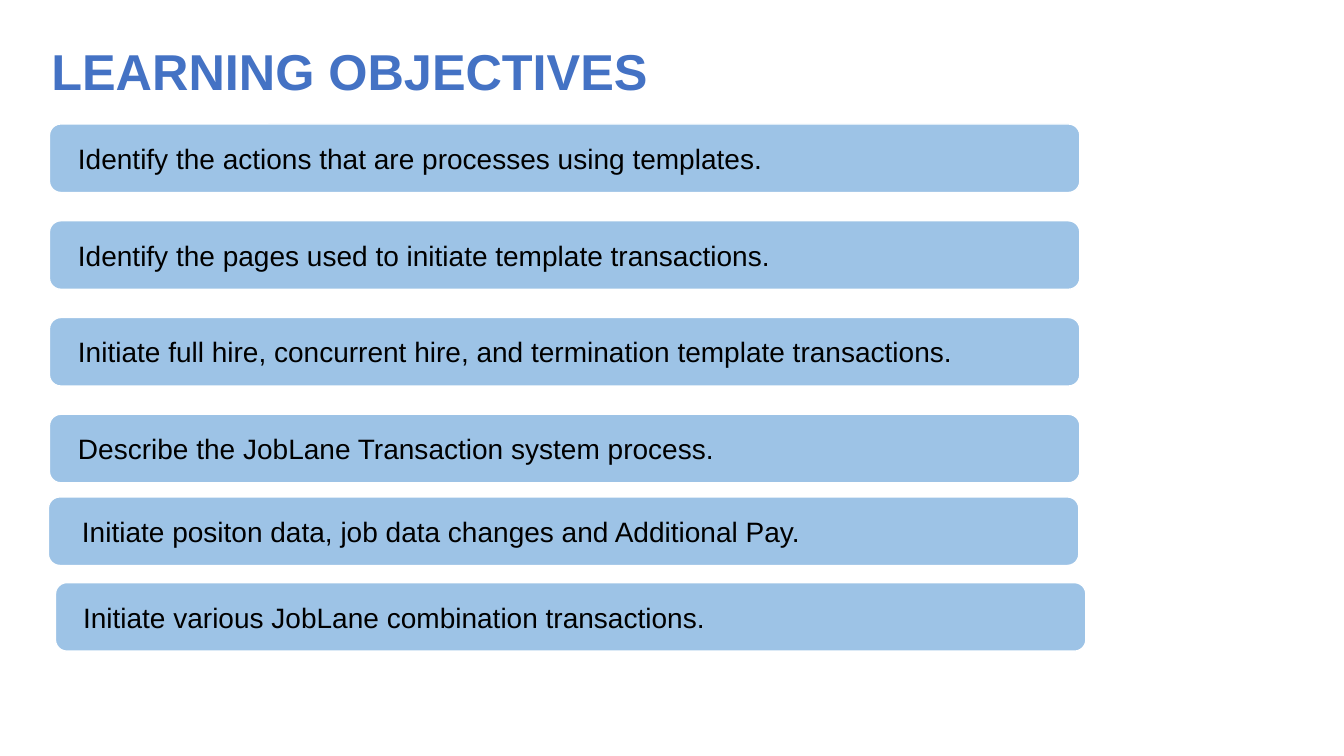
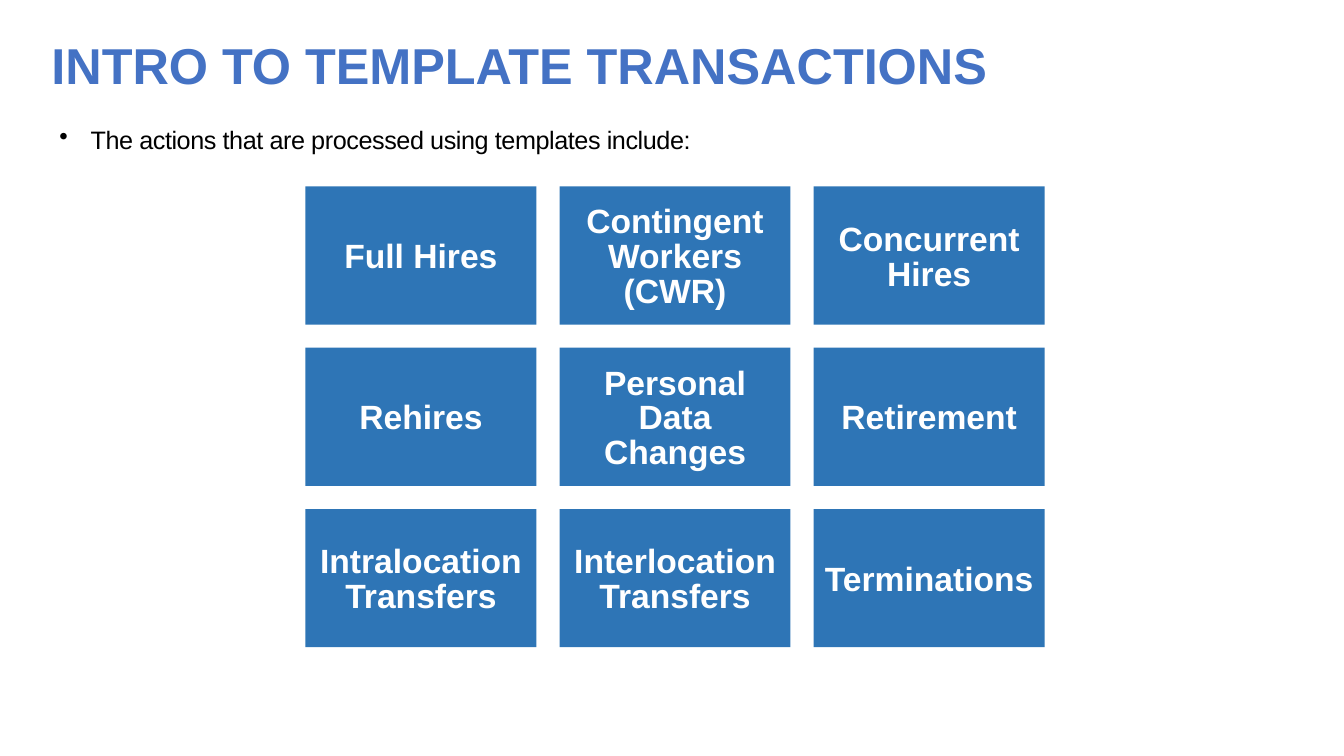
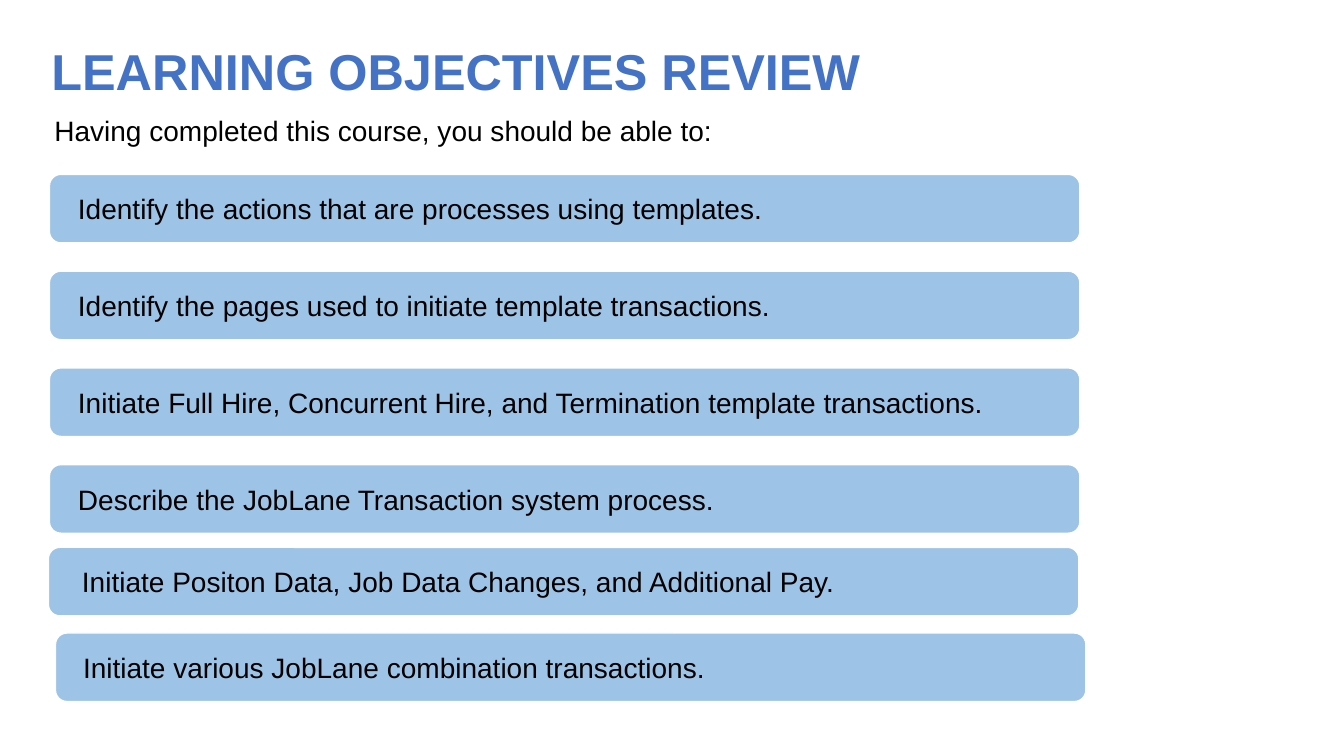
"""Build three slides on template transactions: objectives, actions and review."""
import pptx
import pptx.dml.color
import pptx.enum.shapes
import pptx.enum.text
import pptx.util
import lxml.etree

PX = 9144
TITLE_BLUE, BAR_BLUE, TILE_BLUE = "4472C4", "9DC3E6", "2E75B6"
BLACK, WHITE = "000000", "FFFFFF"
SHAPES = pptx.enum.shapes.MSO_SHAPE
ALIGN = pptx.enum.text.PP_ALIGN
MIDDLE = pptx.enum.text.MSO_ANCHOR.MIDDLE


def rgb(color):
    """Return the colour for a hex string."""
    return pptx.dml.color.RGBColor.from_string(color)


def write(box, text, size, color, bold=False, align=ALIGN.LEFT):
    """Fill a box with one formatted paragraph and return the paragraph."""
    box.text_frame.word_wrap = True
    box.text_frame.auto_size = pptx.enum.text.MSO_AUTO_SIZE.NONE
    para = box.text_frame.paragraphs[0]
    para.text = text
    para.alignment = align
    para.font.name = "Arial"
    para.font.size = pptx.util.Pt(size)
    para.font.bold = bold
    para.font.color.rgb = rgb(color)
    return para


deck = pptx.Presentation()
deck.slide_width, deck.slide_height = 1333 * PX, 750 * PX

pages = []
for heading, top, width in [
    ("LEARNING OBJECTIVES", 32, 989),
    ("INTRO TO TEMPLATE TRANSACTIONS", 26, 1199),
    ("LEARNING OBJECTIVES REVIEW", 32, 989),
]:
    page = deck.slides.add_slide(deck.slide_layouts[5])
    title = page.shapes.title
    title.left, title.top, title.width, title.height = 41 * PX, top * PX, width * PX, 75 * PX
    title.text_frame.vertical_anchor = MIDDLE
    write(title, heading, 36, TITLE_BLUE, bold=True)
    pages.append(page)
objectives_page, actions_page, review_page = pages

objectives = [
    "Identify the actions that are processes using templates.",
    "Identify the pages used to initiate template transactions.",
    "Initiate full hire, concurrent hire, and termination template transactions.",
    "Describe the JobLane Transaction system process.",
    "Initiate positon data, job data changes and Additional Pay.",
    "Initiate various JobLane combination transactions.",
]
review = objectives.copy()
review[2] = "Initiate Full Hire, Concurrent Hire, and Termination template transactions."
review[4] = "Initiate Positon Data, Job Data Changes, and Additional Pay."

bar_places = [(49, 123, 25), (49, 219, 25), (49, 315, 25), (49, 411, 25), (48, 493, 30), (55, 578, 24)]
for page, sentences, shift in [(objectives_page, objectives, 0), (review_page, review, 50)]:
    for sentence, (left, top, inset) in zip(sentences, bar_places):
        bar = page.shapes.add_shape(
            SHAPES.ROUNDED_RECTANGLE, left * PX, (top + shift) * PX, 1022 * PX, 68 * PX)
        bar.shadow.inherit = False
        bar.fill.solid()
        bar.fill.fore_color.rgb = rgb(BAR_BLUE)
        bar.line.color.rgb = rgb(WHITE)
        bar.line.width = pptx.util.Pt(1)
        bar.text_frame.margin_left = inset * PX
        bar.text_frame.vertical_anchor = MIDDLE
        write(bar, sentence, 20, BLACK)

lead = review_page.shapes.add_textbox(44 * PX, 108 * PX, 1171 * PX, 44 * PX)
write(lead, "Having completed this course, you should be able to:", 20, BLACK)

intro = actions_page.shapes.add_textbox(49 * PX, 116 * PX, 1191 * PX, 40 * PX)
intro_para = intro.text_frame.paragraphs[0]
properties = intro_para._p.get_or_add_pPr()
properties.set("marL", str(31 * PX))
properties.set("indent", str(-31 * PX))
bullet = lxml.etree.SubElement(properties, pptx.oxml.ns.qn("a:buChar"))
bullet.set("char", "•")
intro_para = write(intro, "The actions that are processed using templates include:", 18, BLACK)
intro_para.line_spacing = 1.07
intro_para.runs[0]._r.get_or_add_rPr().set("spc", "-30")

actions = [
    "Full Hires", "Contingent\vWorkers\v(CWR)", "Concurrent\vHires",
    "Rehires", "Personal\vData\vChanges", "Retirement",
    "Intralocation\vTransfers", "Interlocation\vTransfers", "Terminations",
]
tile_width, tile_height, gap = 229, 137, 23
for index, action in enumerate(actions):
    row, column = divmod(index, 3)
    tile = actions_page.shapes.add_shape(
        SHAPES.RECTANGLE,
        (303 + column * (tile_width + gap)) * PX, (185 + row * (tile_height + gap)) * PX,
        tile_width * PX, tile_height * PX)
    tile.shadow.inherit = False
    tile.fill.solid()
    tile.fill.fore_color.rgb = rgb(TILE_BLUE)
    tile.line.fill.background()
    frame = tile.text_frame
    frame.margin_left = frame.margin_right = frame.margin_bottom = 0
    frame.margin_top = 5 * PX
    frame.vertical_anchor = MIDDLE
    label = write(tile, action, 24, WHITE, bold=True, align=ALIGN.CENTER)
    label.line_spacing = pptx.util.Pt(24.8)

deck.save("out.pptx")
